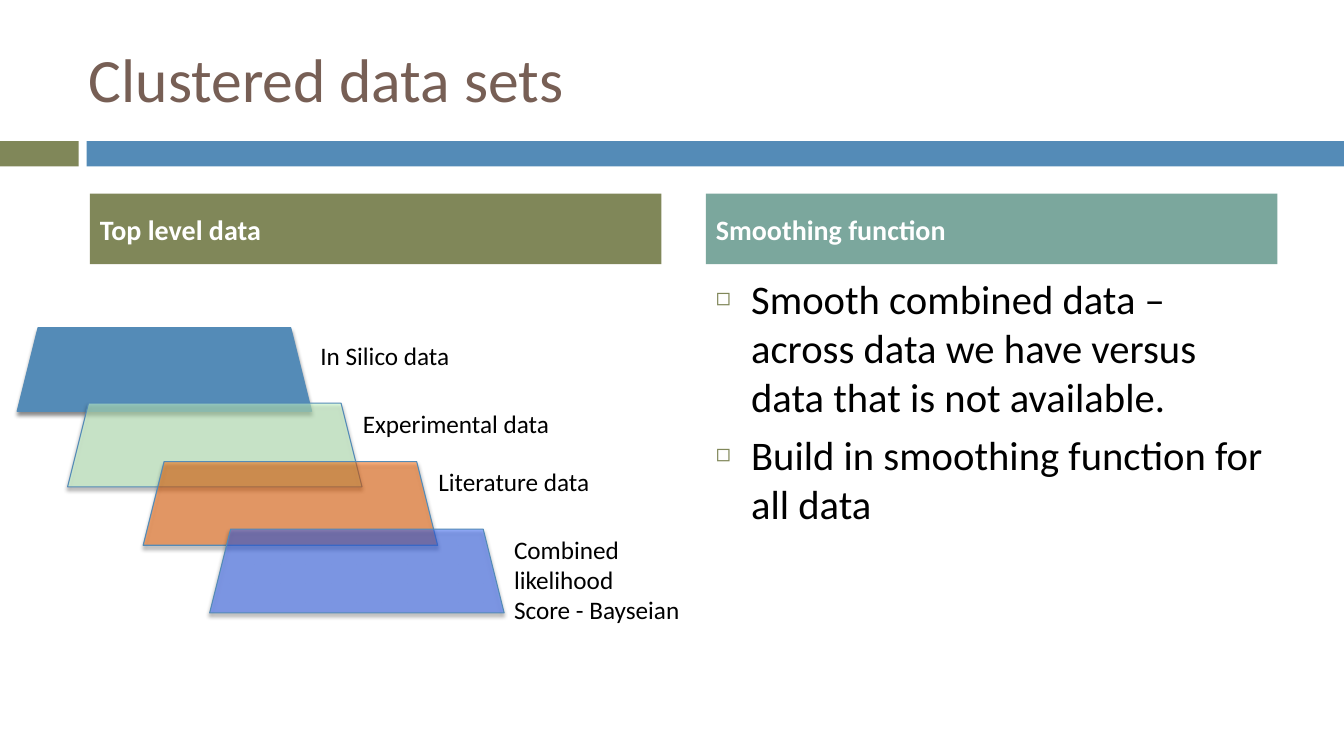
"""Build the clustered data sets slide."""
from lxml import etree
from pptx import Presentation
from pptx.dml.color import RGBColor
from pptx.enum import shapes, text
from pptx.oxml import ns
from pptx.util import Inches, Pt

TITLE = "Clustered data sets"
HEADS = [(1, "Top level data", 0.89, "olive"),
         (3, "Smoothing function", 7, "teal")]
POINTS = ["Smooth combined data – across data we have versus data that is not available.",
          "Build in smoothing function for all data"]
BARS = [(0, 0.78, "olive"), (0.86, 12.47, "blue")]
LAYERS = [(0.17, 3.25, "blue", 100), (0.67, 4, "green", 54),
          (1.42, 4.58, "orange", 49), (2.08, 5.25, "violet", 50)]
LABELS = [(3.08, 3.33, 1.6, ["In Silico data"]),
          (3.5, 4, 2.1, ["Experimental data"]),
          (4.25, 4.58, 1.8, ["Literature data"]),
          (5, 5.25, 1.9, ["Combined likelihood", "Score - Bayseian"])]
THEME = {
    "font": "Calibri",
    "size": {"title": 44, "body": 29, "head": 20, "label": 18},
    "color": {"brown": "775F55", "olive": "808759", "blue": "548BB7",
              "teal": "7BA79D", "green": "CCFFCC", "orange": "FF6600",
              "violet": "3366FF", "white": "FFFFFF", "black": "000000"},
}


def rgb(name):
    """Return a theme colour."""
    return RGBColor.from_string(THEME["color"][name])


def add(parent, tag, **attrs):
    """Append a drawing element and return it."""
    return etree.SubElement(parent, ns.qn("a:" + tag), attrs)


def paint(shape, name):
    """Fill a shape with a theme colour."""
    shape.fill.solid()
    shape.fill.fore_color.rgb = rgb(name)


def place(shape, *box):
    """Move and size a shape in inches."""
    shape.left, shape.top, shape.width, shape.height = map(Inches, box)


def write(shape, lines, role, color, bold=False, gap=0, bullet=False,
          anchor=text.MSO_ANCHOR.TOP):
    """Put styled paragraphs in a shape."""
    frame = shape.text_frame
    frame.text = "\n".join(lines)
    frame.word_wrap = True
    frame.auto_size = text.MSO_AUTO_SIZE.NONE
    frame.vertical_anchor = anchor
    for i, para in enumerate(frame.paragraphs):
        para.alignment = text.PP_ALIGN.LEFT
        para.space_before = Pt(gap if i else 0)
        if bullet:
            props = para._p.get_or_add_pPr()
            props.set("marL", str(Inches(0.35)))
            props.set("indent", str(-Inches(0.35)))
            add(add(props, "buClr"), "srgbClr", val=THEME["color"]["olive"])
            add(props, "buSzPct", val="60000")
            add(props, "buChar", char="◻")
        font = para.font
        font.name, font.size = THEME["font"], Pt(THEME["size"][role])
        font.bold, font.color.rgb = bold, rgb(color)


def draw_bars(slide):
    """Draw the band under the title."""
    for left, width, color in BARS:
        bar = slide.shapes.add_shape(
            shapes.MSO_SHAPE.RECTANGLE, *map(Inches, (left, 1.4, width, 0.25)))
        paint(bar, color)
        bar.line.fill.background()
        bar.shadow.inherit = False


def draw_layers(slide):
    """Draw the stacked data layers with soft shadows."""
    for left, top, color, alpha in LAYERS:
        layer = slide.shapes.add_shape(
            shapes.MSO_SHAPE.TRAPEZOID, *map(Inches, (left, top, 2.92, 0.83)))
        paint(layer, color)
        if alpha < 100:
            tint = layer._element.spPr.find(".//" + ns.qn("a:srgbClr"))
            add(tint, "alpha", val=str(alpha * 1000))
        layer.line.color.rgb = rgb("blue")
        layer.line.width = Pt(0.79)
        layer.shadow.inherit = False
        effect = layer._element.spPr.find(ns.qn("a:effectLst"))
        shade = add(effect, "outerShdw", blurRad=str(Pt(3)), dist=str(Pt(2.4)),
                    dir="5400000", rotWithShape="0")
        add(add(shade, "srgbClr", val=THEME["color"]["black"]), "alpha", val="45000")


def main():
    """Assemble and save the slide."""
    deck = Presentation()
    deck.slide_width, deck.slide_height = Inches(13.33), Inches(7.5)
    slide = deck.slides.add_slide(deck.slide_layouts.get_by_name("Comparison"))
    holders = {h.placeholder_format.idx: h for h in slide.placeholders}
    middle = text.MSO_ANCHOR.MIDDLE
    draw_bars(slide)
    place(holders[0], 0.78, 0.3, 11.89, 0.95)
    write(holders[0], [TITLE], "title", "brown", anchor=middle)
    place(holders[4], 7, 2.67, 5.67, 3.92)
    write(holders[4], POINTS, "body", "black", gap=7, bullet=True)
    for idx, words, left, color in HEADS:
        place(holders[idx], left, 1.92, 5.67, 0.7)
        paint(holders[idx], color)
        write(holders[idx], [words], "head", "white", bold=True, anchor=middle)
    holders[2]._element.getparent().remove(holders[2]._element)
    draw_layers(slide)
    for left, top, width, lines in LABELS:
        box = slide.shapes.add_textbox(
            *map(Inches, (left, top, width, 0.1 + 0.3 * len(lines))))
        write(box, lines, "label", "black")
    deck.save("out.pptx")


if __name__ == "__main__":
    main()
